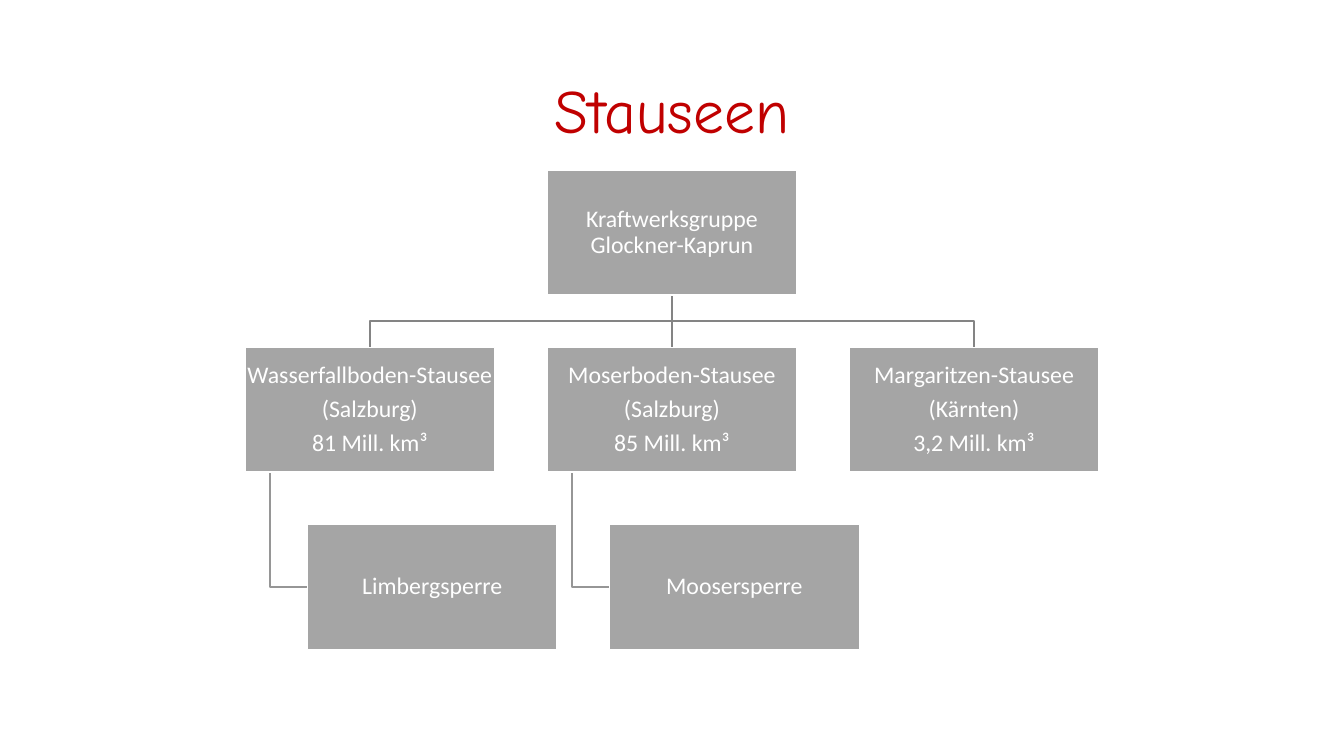
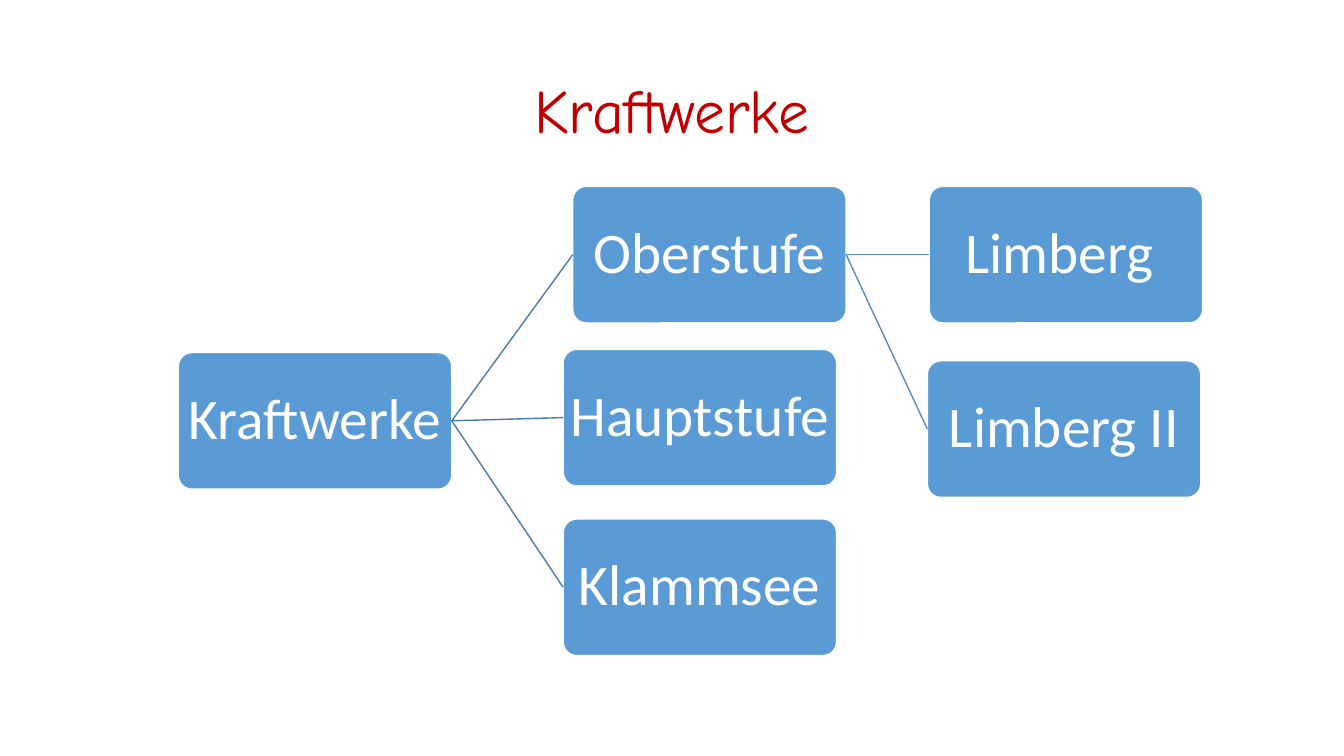
from dataclasses import dataclass

from lxml.etree import SubElement
from pptx import Presentation
from pptx.dml.color import RGBColor
from pptx.enum.shapes import MSO_CONNECTOR, MSO_SHAPE
from pptx.enum.text import MSO_ANCHOR, MSO_AUTO_SIZE, PP_ALIGN
from pptx.oxml.ns import qn
from pptx.util import Pt


@dataclass(frozen=True)
class Theme:
    head: str = "Comic Neue"
    body: str = "Calibri"
    red: str = "C00000"
    white: str = "FFFFFF"
    gray: str = "A5A5A5"
    blue: str = "5B9BD5"
    trunk: str = "848484"
    twig: str = "969696"
    near: str = "497CAB"
    far: str = "538DC1"
    big: int = 44
    mid: int = 41
    small: int = 17
    rule: int = 1


@dataclass(frozen=True)
class Look:
    """Form of the boxes in one diagram."""
    kind: int
    fill: str
    size: int
    wide: float
    high: float
    inset: float


THEME = Theme()
LAKE = Look(MSO_SHAPE.RECTANGLE, THEME.gray, THEME.small, 178.4, 89.2, 0.8)
PLANT = Look(MSO_SHAPE.ROUNDED_RECTANGLE, THEME.blue, THEME.mid, 195.3, 97.6, 1)
LEFT, RIGHT = 1, 3  # connection sites of a box

# Tree of lakes: gap between boxes, top edge, centre line
GAP, TOP, MID = 37.4, 121.5, 480
LAKES = [
    (["Wasserfallboden-Stausee", "(Salzburg)", "81 Mill. km³"], "Limbergsperre"),
    (["Moserboden-Stausee", "(Salzburg)", "85 Mill. km³"], "Moosersperre"),
    (["Margaritzen-Stausee", "(Kärnten)", "3,2 Mill. km³"], None),
]

# Text, left, top of each power station
PLANTS = [
    ("Kraftwerke", 127.4, 251.8),
    ("Oberstufe", 409.1, 133.1),
    ("Hauptstufe", 402.3, 249.5),
    ("Klammsee", 402.3, 370.7),
    ("Limberg ", 663.8, 133.1),
    ("Limberg II", 662.4, 257.7),
]
LINKS = [
    (0, 1, THEME.near), (0, 2, THEME.near), (0, 3, THEME.near),
    (1, 4, THEME.far), (1, 5, THEME.far),
]


def fill_text(frame, lines, font, size, color):
    frame.word_wrap = True
    frame.auto_size = MSO_AUTO_SIZE.NONE
    frame.vertical_anchor = MSO_ANCHOR.MIDDLE
    for i, line in enumerate(lines):
        para = frame.add_paragraph() if i else frame.paragraphs[0]
        para.alignment = PP_ALIGN.CENTER
        para.line_spacing = 0.9
        if i:
            para.space_before = Pt(6)
        run = para.add_run()
        run.text = line
        run.font.name = font
        run.font.size = Pt(size)
        run.font.color.rgb = RGBColor.from_string(color)


def set_line(line, color):
    line.color.rgb = RGBColor.from_string(color)
    line.width = Pt(THEME.rule)


def add_page(deck, text):
    page = deck.slides.add_slide(deck.slide_layouts[5])
    title = page.shapes.title
    title.left, title.top = Pt(66), Pt(28.8)
    title.width, title.height = Pt(828), Pt(104.4)
    fill_text(title.text_frame, [text], THEME.head, THEME.big, THEME.red)
    return page.shapes


def add_box(shapes, look, lines, x, y):
    box = shapes.add_shape(look.kind, Pt(x), Pt(y), Pt(look.wide), Pt(look.high))
    if look.kind == MSO_SHAPE.ROUNDED_RECTANGLE:
        box.adjustments[0] = 0.1
    box.shadow.inherit = False
    box.fill.solid()
    box.fill.fore_color.rgb = RGBColor.from_string(look.fill)
    set_line(box.line, THEME.white)
    frame = box.text_frame
    frame.margin_left = frame.margin_right = Pt(look.inset)
    frame.margin_top = frame.margin_bottom = Pt(look.inset)
    fill_text(frame, lines, THEME.body, look.size, THEME.white)
    return box


def add_line(shapes, color, start=(0, 0), end=(0, 0)):
    line = shapes.add_connector(
        MSO_CONNECTOR.STRAIGHT, *(Pt(v) for v in (*start, *end)))
    set_line(line.line, color)
    SubElement(line._element.spPr, qn("a:effectLst"))
    return line


def add_bend(shapes, color, points):
    """Draw an open line with corners."""
    first, *rest = [(Pt(x), Pt(y)) for x, y in points]
    pen = shapes.build_freeform(*first)
    pen.add_line_segments(rest, close=False)
    bend = pen.convert_to_shape()
    bend.shadow.inherit = False
    bend.fill.background()
    set_line(bend.line, color)


def draw_lakes(deck):
    shapes = add_page(deck, "Stauseen")
    wide, high = LAKE.wide, LAKE.high
    step = high + GAP
    base, row, low = TOP + high, TOP + step, TOP + 2 * step
    boxes = [(["Kraftwerksgruppe Glockner-Kaprun"], MID - wide / 2, TOP)]
    for i, (lines, dam) in enumerate(LAKES):
        mid = MID + (i - 1) * (wide + GAP)
        x = mid - wide / 2
        if mid == MID:
            add_line(shapes, THEME.trunk, (MID, base), (MID, row))
        else:
            turn = base + GAP / 2
            add_bend(shapes, THEME.trunk,
                     [(MID, base), (MID, turn), (mid, turn), (mid, row)])
        boxes.append((lines, x, row))
        if dam:
            stem, side, level = x + wide / 10, x + wide / 4, low + high / 2
            add_bend(shapes, THEME.twig,
                     [(stem, row + high), (stem, level), (side, level)])
            boxes.append(([dam], side, low))
    for lines, x, y in boxes:
        add_box(shapes, LAKE, lines, x, y)


def draw_plants(deck):
    shapes = add_page(deck, "Kraftwerke")
    boxes = [add_box(shapes, PLANT, [text], x, y) for text, x, y in PLANTS]
    for start, end, color in LINKS:
        line = add_line(shapes, color)
        line.begin_connect(boxes[start], RIGHT)
        line.end_connect(boxes[end], LEFT)


def main():
    deck = Presentation()
    deck.slide_width, deck.slide_height = Pt(960), Pt(540)
    draw_lakes(deck)
    draw_plants(deck)
    deck.save("out.pptx")


if __name__ == "__main__":
    main()
